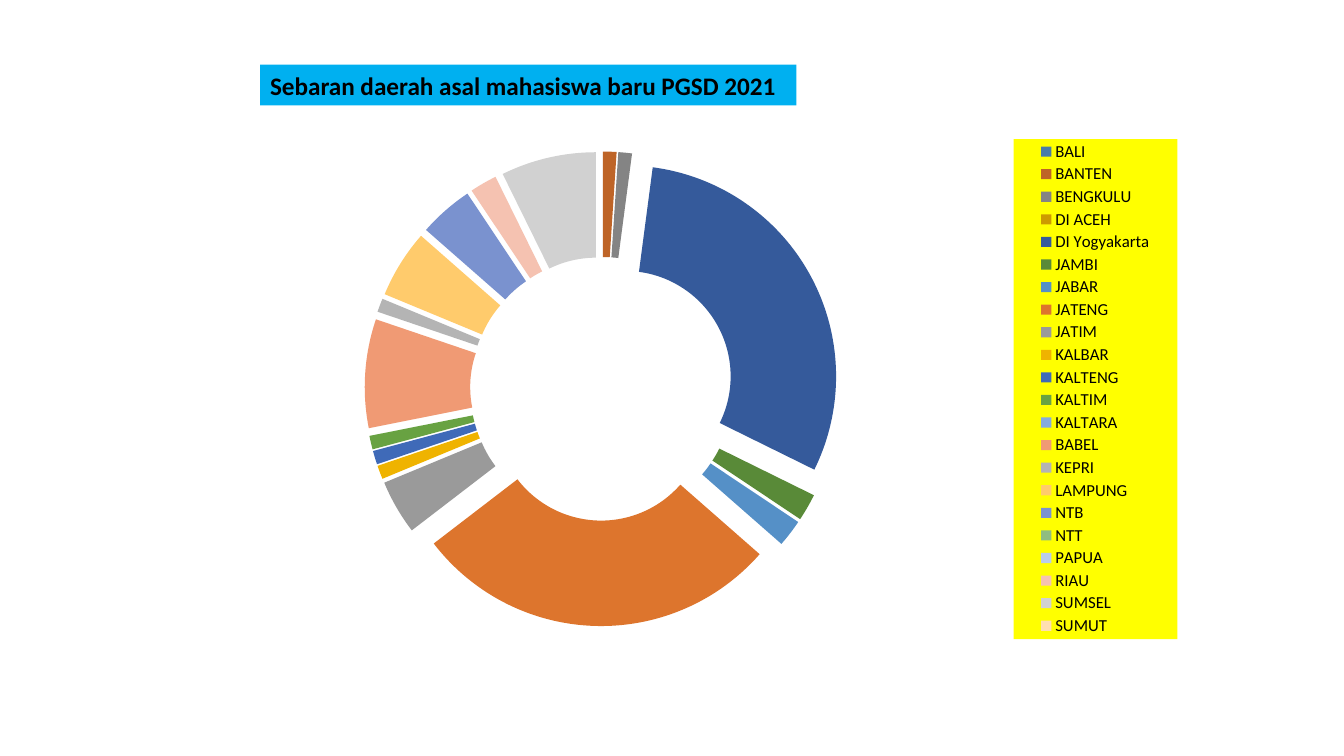
from pptx import Presentation
from pptx.chart.data import CategoryChartData
from pptx.dml.color import RGBColor
from pptx.enum.chart import XL_CHART_TYPE, XL_LEGEND_POSITION
from pptx.enum.shapes import MSO_SHAPE
from pptx.enum.text import MSO_ANCHOR, PP_ALIGN
from pptx.oxml import parse_xml
from pptx.oxml.ns import nsdecls, qn
from pptx.util import Pt

RING = XL_CHART_TYPE.DOUGHNUT_EXPLODED
RIGHT = XL_LEGEND_POSITION.RIGHT
RECT = MSO_SHAPE.RECTANGLE
MIDDLE = MSO_ANCHOR.MIDDLE
LEFT = PP_ALIGN.LEFT

FONT = "Calibri"
BLACK = RGBColor(0x00, 0x00, 0x00)
CYAN = RGBColor(0x00, 0xB0, 0xF0)
YELLOW = RGBColor(0xFF, 0xFF, 0x00)
WIDE, HIGH = 735.8, 357.2  # chart size in points

# Region, share in percent, slice colour
REGIONS = [
    ("BALI", 0, RGBColor(0x49, 0x7B, 0xA8)),
    ("BANTEN", 1, RGBColor(0xBE, 0x64, 0x27)),
    ("BENGKULU", 1, RGBColor(0x84, 0x84, 0x84)),
    ("DI ACEH", 0, RGBColor(0xCC, 0x9A, 0x00)),
    ("DI Yogyakarta", 29, RGBColor(0x35, 0x5A, 0x9B)),
    ("JAMBI", 2, RGBColor(0x59, 0x8A, 0x38)),
    ("JABAR", 2, RGBColor(0x55, 0x90, 0xC7)),
    ("JATENG", 27, RGBColor(0xDD, 0x75, 0x2D)),
    ("JATIM", 4, RGBColor(0x9A, 0x9A, 0x9A)),
    ("KALBAR", 1, RGBColor(0xEF, 0xB3, 0x00)),
    ("KALTENG", 1, RGBColor(0x3F, 0x6A, 0xB8)),
    ("KALTIM", 1, RGBColor(0x68, 0xA2, 0x42)),
    ("KALTARA", 0, RGBColor(0x85, 0xAB, 0xDD)),
    ("BABEL", 8, RGBColor(0xF0, 0x9A, 0x74)),
    ("KEPRI", 1, RGBColor(0xB4, 0xB4, 0xB4)),
    ("LAMPUNG", 5, RGBColor(0xFF, 0xCB, 0x6C)),
    ("NTB", 4, RGBColor(0x7A, 0x92, 0xCF)),
    ("NTT", 0, RGBColor(0x90, 0xBD, 0x80)),
    ("PAPUA", 0, RGBColor(0xB9, 0xCD, 0xE9)),
    ("RIAU", 2, RGBColor(0xF5, 0xC2, 0xB1)),
    ("SUMSEL", 7, RGBColor(0xD1, 0xD1, 0xD1)),
    ("SUMUT", 0, RGBColor(0xFF, 0xDF, 0xB0)),
]


def write(frame, text, size=18, color=BLACK, bold=False, align=LEFT):
    para = frame.paragraphs[0]
    para.alignment = align
    run = para.add_run()
    run.text = text
    run.font.name = FONT
    run.font.size = Pt(size)
    run.font.bold = bold
    run.font.color.rgb = color


def place(parent, x, y, w, h, inner=False):
    """Fix a chart part, in points from the chart's top left corner."""
    for old in parent.findall(qn("c:layout")):
        parent.remove(old)
    target = '<c:layoutTarget val="inner"/>' if inner else ""
    layout = parse_xml(
        f'<c:layout {nsdecls("c")}><c:manualLayout>{target}'
        '<c:xMode val="edge"/><c:yMode val="edge"/>'
        f'<c:x val="{x / WIDE}"/><c:y val="{y / HIGH}"/>'
        f'<c:w val="{w / WIDE}"/><c:h val="{h / HIGH}"/>'
        '</c:manualLayout></c:layout>')
    parent.insert(0 if inner else 1, layout)


deck = Presentation()
deck.slide_width, deck.slide_height = Pt(960), Pt(540)
slide = deck.slides.add_slide(deck.slide_layouts[6])

# Ring chart
data = CategoryChartData(number_format="0")
data.categories = [name for name, share, color in REGIONS]
data.add_series("Series 1", [share for name, share, color in REGIONS])
chart = slide.shapes.add_chart(
    RING, Pt(108), Pt(99.3), Pt(WIDE), Pt(HIGH), data).chart
chart.has_title = False
chart.font.name = FONT
chart.font.size = Pt(10)
chart.font.color.rgb = BLACK
plot = chart.plots[0]
plot.vary_by_categories = True
plot.has_data_labels = False
for i, (name, share, color) in enumerate(REGIONS):
    look = plot.series[0].points[i].format
    look.fill.solid()
    look.fill.fore_color.rgb = color
    look.line.fill.background()
place(chart._chartSpace.chart.plotArea, 152.5, 9, 339, 339, inner=True)

# Legend on yellow
chart.has_legend = True
legend = chart.legend
legend.position = RIGHT
legend.include_in_layout = False
legend.font.name = FONT
legend.font.size = Pt(12)
legend.font.color.rgb = BLACK
place(legend._element, 616, 0, 117, HIGH)
legend._element.find(qn("c:overlay")).addnext(parse_xml(
    f'<c:spPr {nsdecls("c", "a")}><a:solidFill><a:srgbClr val="{YELLOW}"/>'
    '</a:solidFill></c:spPr>'))

# Title
title = slide.shapes.add_shape(RECT, Pt(185.8), Pt(46.2), Pt(383), Pt(29.1))
title.shadow.inherit = False
title.fill.solid()
title.fill.fore_color.rgb = CYAN
title.line.fill.background()
title.text_frame.word_wrap = False
title.text_frame.vertical_anchor = MIDDLE
write(title.text_frame, "Sebaran daerah asal mahasiswa baru PGSD 2021", bold=True)

deck.save("out.pptx")
